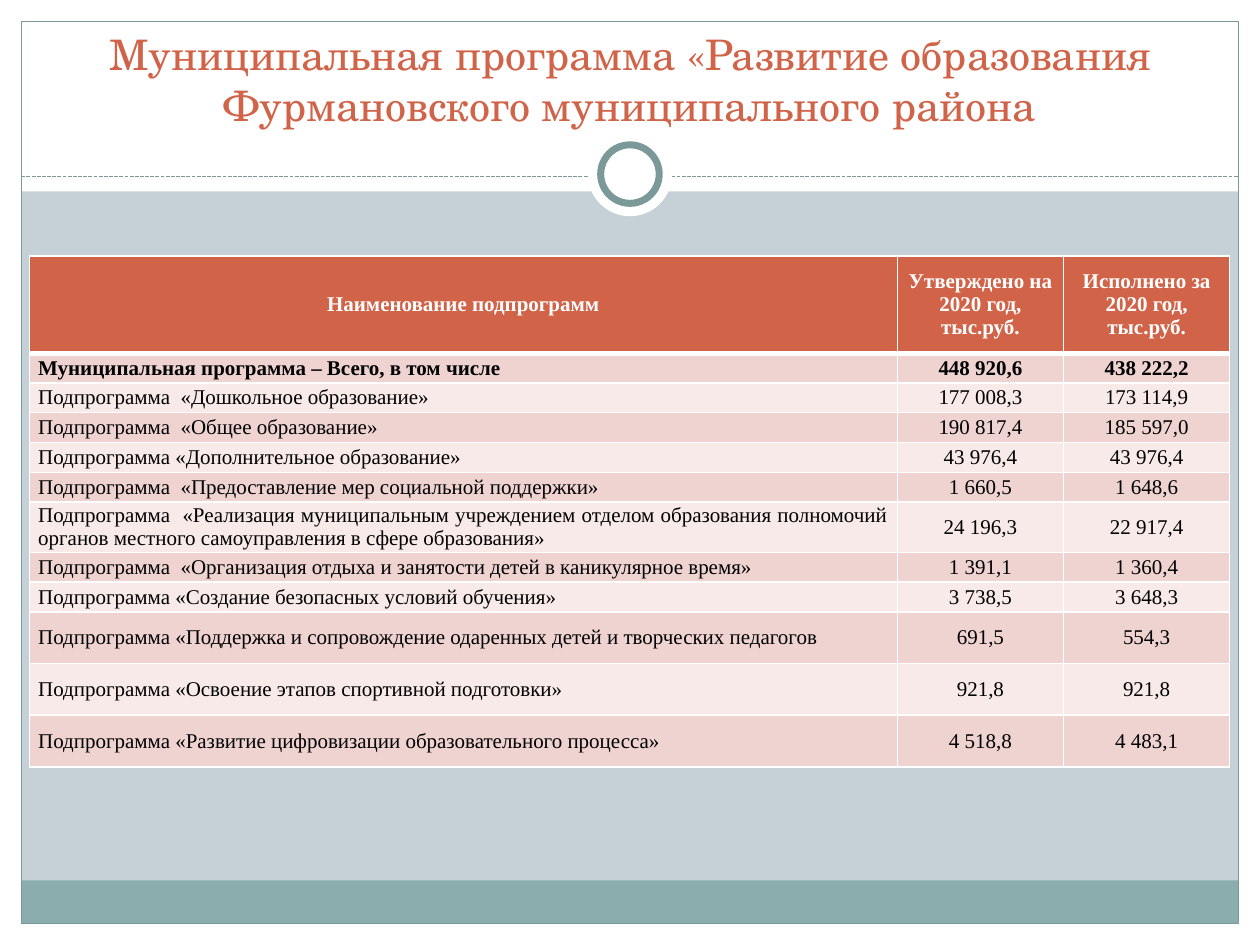
from lxml.etree import SubElement
from pptx import Presentation
from pptx.dml.color import RGBColor as Rgb
from pptx.enum.dml import MSO_LINE as Dash
from pptx.enum.shapes import MSO_CONNECTOR as Connector, MSO_SHAPE as Shape
from pptx.enum.text import MSO_ANCHOR as Anchor, PP_ALIGN as Align
from pptx.oxml.ns import qn
from pptx.util import Cm, Pt

TITLE = "Муниципальная программа «Развитие образования Фурмановского муниципального района"
HEADINGS = ("Наименование подпрограмм", "Утверждено на 2020 год, тыс.руб.", "Исполнено за 2020 год, тыс.руб.")
TOTAL = ("Муниципальная программа – Всего, в том числе", "448 920,6", "438 222,2")
SUBPROGRAMS = [
    ("Подпрограмма  «Дошкольное образование»", "177 008,3", "173 114,9"),
    ("Подпрограмма  «Общее образование»", "190 817,4", "185 597,0"),
    ("Подпрограмма «Дополнительное образование»", "43 976,4", "43 976,4"),
    ("Подпрограмма  «Предоставление мер социальной поддержки»", "1 660,5", "1 648,6"),
    ("Подпрограмма  «Реализация муниципальным учреждением отделом образования полномочий "
     "органов местного самоуправления в сфере образования»", "24 196,3", "22 917,4"),
    ("Подпрограмма  «Организация отдыха и занятости детей в каникулярное время»", "1 391,1", "1 360,4"),
    ("Подпрограмма «Создание безопасных условий обучения»", "3 738,5", "3 648,3"),
    ("Подпрограмма «Поддержка и сопровождение одаренных детей и творческих педагогов", "691,5", "554,3"),
    ("Подпрограмма «Освоение этапов спортивной подготовки»", "921,8", "921,8"),
    ("Подпрограмма «Развитие цифровизации образовательного процесса»", "4 518,8", "4 483,1"),
]
BUDGET = [HEADINGS, TOTAL, *SUBPROGRAMS]
COLUMN_WIDTHS = (17.5, 3.35, 3.35)
ROW_HEIGHTS = [1.96] + [0.6] * 5 + [0.95] + [0.6] * 2 + [1.04] * 3
WIDTH, HEIGHT, MARGIN = 25.4, 19.05, 0.43
HEADER_HEIGHT, DIVIDER_Y, FOOTER_TOP = 3.86, 3.56, 17.75

THEME = {
    "background": "C5D1D7", "white": "FFFFFF", "black": "000000", "accent": "D16349",
    "footer": "8CADAE", "frame": "7C999A", "bands": ("EED3D0", "F7EAE9"),
    "title_font": "TeX Gyre Schola", "table_font": "Times New Roman",
    "title_size": 24, "table_size": 12, "thin": 0.75, "ring": 4, "grid": 1, "header_rule": 3,
}


def color(name):
    return Rgb.from_string(THEME.get(name, name))


def add_panel(slide, kind, box, fill=None, line_width=None):
    panel = slide.shapes.add_shape(kind, *map(Cm, box))
    panel.shadow.inherit = False
    if fill:
        panel.fill.solid()
        panel.fill.fore_color.rgb = color(fill)
    else:
        panel.fill.background()
    if line_width:
        panel.line.color.rgb = color("frame")
        panel.line.width = Pt(line_width)
    else:
        panel.line.fill.background()


def write(frame, text, font, size, ink, align, bold=False):
    frame.word_wrap = True
    paragraph = frame.paragraphs[0]
    paragraph.text = text
    paragraph.alignment = align
    paragraph.font.name = font
    paragraph.font.size = Pt(size)
    paragraph.font.bold = bold
    paragraph.font.color.rgb = color(ink)


def add_border(cell, side, width):
    border = SubElement(cell._tc.get_or_add_tcPr(), qn(f"a:ln{side}"), w=str(Pt(width)))
    SubElement(SubElement(border, qn("a:solidFill")), qn("a:srgbClr"), val=THEME["white"])


def add_decor(slide):
    inner_width, inner_height = WIDTH - 2 * MARGIN, HEIGHT - 2 * MARGIN
    bottom = HEIGHT - MARGIN
    for box in ((0, bottom, WIDTH, MARGIN), (0, 0, WIDTH, HEADER_HEIGHT),
                (0, 0, MARGIN, HEIGHT), (WIDTH - MARGIN, 0, MARGIN, HEIGHT)):
        add_panel(slide, Shape.RECTANGLE, box, "white")
    add_panel(slide, Shape.RECTANGLE, (MARGIN, FOOTER_TOP, inner_width, bottom - FOOTER_TOP), "footer")
    add_panel(slide, Shape.RECTANGLE, (MARGIN, MARGIN, inner_width, inner_height), line_width=THEME["thin"])
    divider = slide.shapes.add_connector(
        Connector.STRAIGHT, Cm(MARGIN), Cm(DIVIDER_Y), Cm(WIDTH - MARGIN), Cm(DIVIDER_Y))
    divider.line.color.rgb = color("frame")
    divider.line.width = Pt(THEME["thin"])
    divider.line.dash_style = Dash.SQUARE_DOT
    SubElement(divider._element.spPr, qn("a:effectLst"))
    for diameter, ring in ((1.7, None), (1.18, THEME["ring"])):
        box = ((WIDTH - diameter) / 2, 3.51 - diameter / 2, diameter, diameter)
        add_panel(slide, Shape.OVAL, box, "white", ring)


def add_title(slide):
    frame = slide.shapes.add_textbox(Cm(0.85), Cm(0.64), Cm(23.7), Cm(2.1)).text_frame
    write(frame, TITLE, THEME["title_font"], THEME["title_size"], "accent", Align.CENTER)
    frame.vertical_anchor = Anchor.BOTTOM


def add_budget(slide):
    table = slide.shapes.add_table(
        len(BUDGET), len(HEADINGS), Cm(0.59), Cm(5.16), Cm(sum(COLUMN_WIDTHS)), Cm(sum(ROW_HEIGHTS))).table
    table.horz_banding = False
    for column, width in zip(table.columns, COLUMN_WIDTHS):
        column.width = Cm(width)
    for r, (values, height) in enumerate(zip(BUDGET, ROW_HEIGHTS)):
        table.rows[r].height = Cm(height)
        header = r == 0
        for c, value in enumerate(values):
            cell = table.cell(r, c)
            cell.margin_left = cell.margin_right = Cm(0.18)
            cell.margin_top = cell.margin_bottom = 0
            cell.vertical_anchor = Anchor.MIDDLE
            for side in "LRTB":
                heavy = (r, side) in ((0, "B"), (1, "T"))
                add_border(cell, side, THEME["header_rule" if heavy else "grid"])
            cell.fill.solid()
            cell.fill.fore_color.rgb = color("accent" if header else THEME["bands"][(r - 1) % 2])
            align = Align.JUSTIFY if c == 0 and not header else Align.CENTER
            write(cell.text_frame, value, THEME["table_font"], THEME["table_size"],
                  "white" if header else "black", align, bold=r < 2)


def main():
    """Build the education programme budget slide."""
    deck = Presentation()
    deck.slide_width, deck.slide_height = Cm(WIDTH), Cm(HEIGHT)
    slide = deck.slides.add_slide(deck.slide_layouts[6])
    slide.background.fill.solid()
    slide.background.fill.fore_color.rgb = color("background")
    add_decor(slide)
    add_title(slide)
    add_budget(slide)
    deck.save("out.pptx")


if __name__ == "__main__":
    main()
